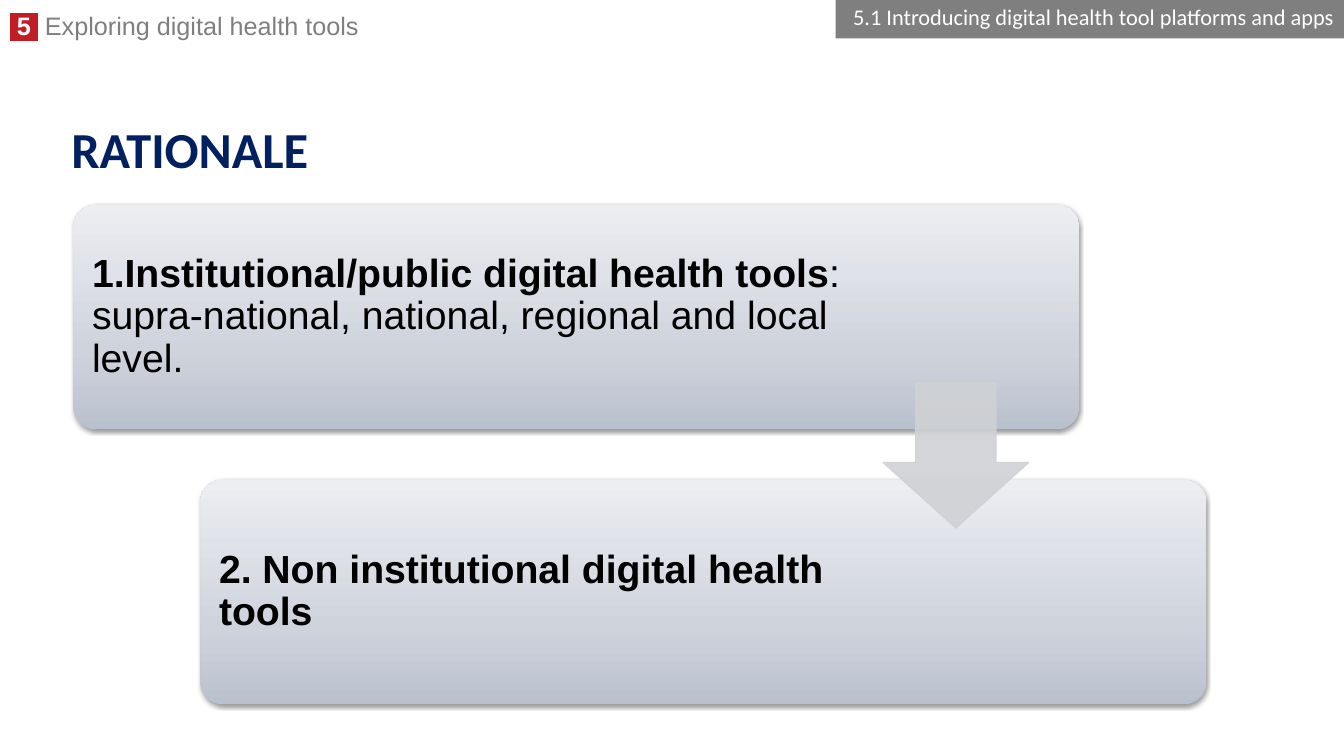
from lxml.etree import SubElement
from pptx import Presentation
from pptx.dml.color import RGBColor
from pptx.enum.shapes import MSO_SHAPE
from pptx.enum.text import MSO_ANCHOR, PP_ALIGN
from pptx.oxml import parse_xml
from pptx.oxml.ns import nsdecls, qn
from pptx.util import Cm, Pt

COLORS = {
    "white": "FFFFFF", "black": "000000", "gray": "7F7F7F", "navy": "002060",
    "red": "C01E24", "arrow": "CFD1D4",
    "low": "BAC1CE", "middle": "CFD3DC", "high": "EDEEF2",
}


class SlideBuilder:
    """Holds the style and the current slide, and draws its elements."""

    def __init__(self, slide):
        self.shapes = slide.shapes

    def color(self, name):
        return RGBColor.from_string(COLORS[name])

    def fill_frame(self, frame, runs, size, font, spacing=0.9, inset=(0.25, 0.13),
                   align=PP_ALIGN.LEFT, anchor=MSO_ANCHOR.MIDDLE):
        frame.word_wrap = True
        frame.vertical_anchor = anchor
        frame.margin_left = frame.margin_right = Cm(inset[0])
        frame.margin_top = frame.margin_bottom = Cm(inset[1])
        paragraph = frame.paragraphs[0]
        paragraph.alignment = align
        paragraph.line_spacing = spacing
        for words, color, bold, *highlight in runs:
            run = paragraph.add_run()
            run.text = words
            run.font.size = Pt(size)
            run.font.bold = bold
            run.font.color.rgb = self.color(color)
            for name in highlight:
                mark = SubElement(run.font._element, qn("a:highlight"))
                SubElement(mark, qn("a:srgbClr"), val=COLORS[name])
            run.font.name = font

    def text(self, box, runs, size, font, **layout):
        frame = self.shapes.add_textbox(*map(Cm, box)).text_frame
        self.fill_frame(frame, runs, size, font, **layout)

    def shape(self, kind, box, *adjustments):
        shape = self.shapes.add_shape(kind, *map(Cm, box))
        shape.shadow.inherit = False
        shape.line.fill.background()
        for index, value in enumerate(adjustments):
            shape.adjustments[index] = value
        return shape

    def banner(self, box, words):
        banner = self.shape(MSO_SHAPE.RECTANGLE, box)
        banner.fill.solid()
        banner.fill.fore_color.rgb = self.color("gray")
        self.fill_frame(banner.text_frame, [(words, "white", False)], 16, "Calibri",
                        spacing=0.8, align=PP_ALIGN.RIGHT)

    def panel(self, box, text_width, runs):
        left, top, _, height = box
        panel = self.shape(MSO_SHAPE.ROUNDED_RECTANGLE, box, 0.1)
        stops = "".join(
            f'<a:gs pos="{percent * 1000}"><a:srgbClr val="{COLORS[name]}"/></a:gs>'
            for percent, name in ((0, "low"), (35, "middle"), (100, "high")))
        properties = panel._element.spPr
        properties.find(qn("a:prstGeom")).addnext(parse_xml(
            f'<a:gradFill {nsdecls("a")} rotWithShape="1"><a:gsLst>{stops}</a:gsLst>'
            '<a:lin ang="16200000" scaled="0"/></a:gradFill>'))
        properties.find(qn("a:effectLst")).append(parse_xml(
            f'<a:outerShdw {nsdecls("a")} blurRad="{Pt(3.1)}" dist="{Pt(1.6)}" '
            f'dir="5400000" rotWithShape="0"><a:srgbClr val="{COLORS["black"]}">'
            '<a:alpha val="38000"/></a:srgbClr></a:outerShdw>'))
        pad = 0.17
        self.text((left + pad, top + pad, text_width, height - 2 * pad), runs,
                  28, "Arial", inset=(0.3, 0.3))

    def arrow(self, box):
        arrow = self.shape(MSO_SHAPE.DOWN_ARROW, box, 0.55, 0.45)
        arrow.line.width = Pt(0.75)
        for fill in (arrow.fill, arrow.line.fill):
            fill.solid()
            fill.fore_color.rgb = self.color("arrow")
        for tint in arrow._element.spPr.iter(qn("a:srgbClr")):
            SubElement(tint, qn("a:alpha"), val="90000")


def main():
    """Build the rationale slide."""
    presentation = Presentation()
    presentation.slide_width, presentation.slide_height = Cm(33.87), Cm(19.05)
    builder = SlideBuilder(
        presentation.slides.add_slide(presentation.slide_layouts[6]))

    builder.text((0, 0.28, 24.18, 0.89),
                 [(" 5 ", "white", True, "red"),
                  (" Exploring digital health tools", "gray", False)],
                 18, "Arial", spacing=0.8, anchor=MSO_ANCHOR.TOP)
    builder.text((1.55, 3, 30.73, 1.68), [("RATIONALE", "navy", True)],
                 36, "Calibri")

    steps = [
        (19.48, [("1.Institutional/public digital health tools", "black", True),
                 (": supra-national, national, regional and local level.",
                  "black", False)]),
        (16.87, [("2. Non institutional digital health tools", "black", True)]),
    ]
    for index, (text_width, runs) in enumerate(steps):
        builder.panel((1.85 + 3.2 * index, 5.16 + 6.93 * index, 25.35, 5.66),
                      text_width, runs)
    builder.arrow((22.25, 9.63, 3.68, 3.68))
    builder.banner((21.06, 0, 12.81, 0.97),
                   "5.1 Introducing digital health tool platforms and apps")
    presentation.save("out.pptx")


if __name__ == "__main__":
    main()
